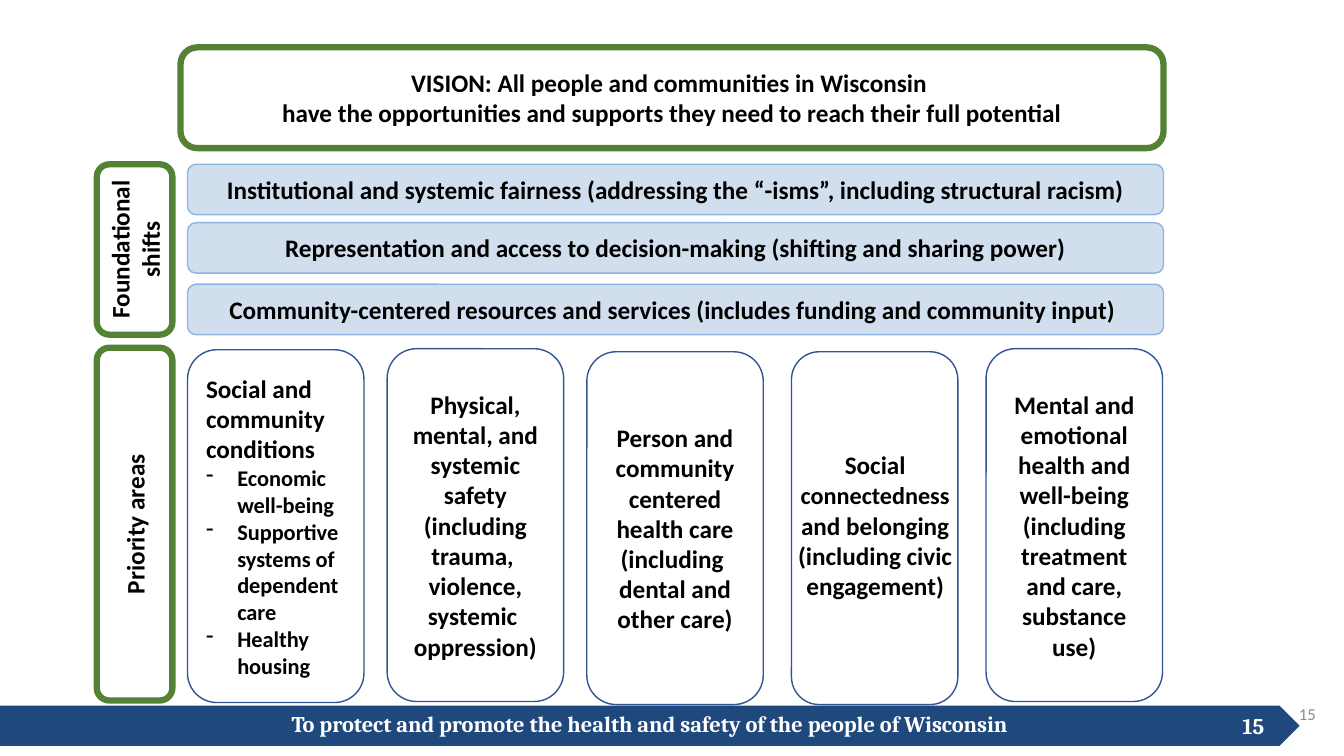
from dataclasses import dataclass

from lxml import etree
from pptx import Presentation
from pptx.dml.color import RGBColor
from pptx.enum import shapes, text
from pptx.oxml import ns
from pptx.util import Inches, Pt

ALIGN = text.PP_ALIGN
ANCHOR = text.MSO_ANCHOR


@dataclass(frozen=True)
class Theme:
    body_font: str = "Calibri"
    footer_font: str = "Cambria"
    black: str = "000000"
    white: str = "FFFFFF"
    grey: str = "8C8C8C"
    navy: str = "1F497D"
    green: str = "548235"
    card_line: str = "325491"
    shift_fill: str = "B9CDE5"
    shift_line: str = "8EB4E3"
    main_size: float = 18
    fitted_size: float = 17.3
    small_size: float = 16
    number_size: float = 12
    thick: float = 4.5
    thin: float = 1


THEME = Theme()
VISION = ("VISION: All people and communities in Wisconsin \n"
          "have the opportunities and supports they need to reach their full potential")
MISSION = "To protect and promote the health and safety of the people of Wisconsin"
PAGE = "15"

SHIFTS = [
    (1.63, "Institutional and systemic fairness (addressing the “-isms”, including structural racism)"),
    (2.21, "Representation and access to decision-making (shifting and sharing power)"),
    (2.82, "Community-centered resources and services (includes funding and community input) "),
]
LABELS = [(1.63, 1.69, "Foundational shifts"), (3.45, 3.5, "Priority areas")]

# top, width, centred text
PRIORITIES = [
    (3.47, 1.75, ""),
    (3.46, 1.75, "Physical, mental, and systemic safety (including trauma, \n"
                 "violence, systemic \noppression)"),
    (3.49, 1.75, "Person and community centered health care (including \n"
                 "dental and other care)"),
    (3.49, 1.65, ""),
    (3.46, 1.75, "Mental and emotional health and well-being "
                 "(including treatment and care, substance use)"),
]
CONDITIONS = ["Economic \nwell-being", "Supportive systems of dependent  care", "Healthy housing"]
CONTENT_LEFT, CONTENT_WIDTH = 1.86, 9.68
CARD_WIDTH, CARD_HEIGHT, CARD_STEP = 1.75, 3.5, 1.98


def rgb(color):
    return RGBColor.from_string(color)


def write(paragraph, words, size=THEME.main_size, color=THEME.black,
          font=THEME.body_font, bold=True, align=ALIGN.CENTER):
    """Add runs to a paragraph, with a line break at each newline."""
    paragraph.alignment = align
    for index, line in enumerate(words.split("\n")):
        if index:
            paragraph.add_line_break()
        run = paragraph.add_run()
        run.text = line
        run.font.name, run.font.size, run.font.bold = font, Pt(size), bold
        run.font.color.rgb = rgb(color)


def dash_bullet(paragraph):
    props = paragraph._p.get_or_add_pPr()
    props.set("marL", str(Inches(0.31)))
    props.set("indent", str(Inches(-0.31)))
    etree.SubElement(props, ns.qn("a:buChar")).set("char", "-")


def panel(slide, left, top, width, height, fill=None, line=None, line_width=THEME.thin,
          words="", kind=shapes.MSO_SHAPE.ROUNDED_RECTANGLE):
    box = slide.shapes.add_shape(kind, Inches(left), Inches(top), Inches(width), Inches(height))
    box.shadow.inherit = False
    if fill:
        box.fill.solid()
        box.fill.fore_color.rgb = rgb(fill)
    else:
        box.fill.background()
    if line:
        box.line.color.rgb = rgb(line)
        box.line.width = Pt(line_width)
    else:
        box.line.fill.background()
    box.text_frame.word_wrap = True
    box.text_frame.vertical_anchor = ANCHOR.MIDDLE
    if words:
        write(box.text_frame.paragraphs[0], words)
    return box


def text_area(slide, left, top, width, height, anchor=ANCHOR.TOP, inset=(0.1, 0.05)):
    """Add a wrapping text box and return its first paragraph."""
    frame = slide.shapes.add_textbox(
        Inches(left), Inches(top), Inches(width), Inches(height)).text_frame
    frame.word_wrap = True
    frame.vertical_anchor = anchor
    frame.margin_left = frame.margin_right = Inches(inset[0])
    frame.margin_top = frame.margin_bottom = Inches(inset[1])
    return frame.paragraphs[0]


def footer(slide):
    panel(slide, -0.11, 7, 13, 0.4, fill=THEME.navy, kind=shapes.MSO_SHAPE.PENTAGON)
    style = dict(size=THEME.small_size, color=THEME.white, font=THEME.footer_font)
    write(text_area(slide, 0, 7, 12.89, 0.37), MISSION, **style)
    write(text_area(slide, 9.56, 7, 3.11, 0.4, ANCHOR.MIDDLE, (0.13, 0.07)),
          PAGE, align=ALIGN.RIGHT, **style)
    write(text_area(slide, 12.35, 6.8, 0.8, 0.57, ANCHOR.MIDDLE, (0.1, 0.1)),
          PAGE, THEME.number_size, THEME.grey, bold=False, align=ALIGN.RIGHT)


def side_label(slide, top, height, words):
    label = panel(slide, 0.96, top, 0.75, height, line=THEME.green,
                  line_width=THEME.thick, words=words)
    label.text_frame._txBody.bodyPr.set("vert", "vert270")


def shift_bar(slide, top, words):
    bar = panel(slide, CONTENT_LEFT, top, CONTENT_WIDTH, 0.5,
                THEME.shift_fill, THEME.shift_line, words=words)
    color = bar.fill._xPr.find(ns.qn("a:solidFill"))[0]
    etree.SubElement(color, ns.qn("a:alpha")).set("val", "65000")


def priority_cards(slide):
    cards = []
    for column, (top, width, words) in enumerate(PRIORITIES):
        left = CONTENT_LEFT + column * CARD_STEP + (CARD_WIDTH - width) / 2
        cards.append(panel(slide, left, top, width, CARD_HEIGHT,
                           line=THEME.card_line, words=words))
    return cards


def social_conditions(card):
    frame = card.text_frame
    write(frame.paragraphs[0], "Social and community conditions", align=ALIGN.LEFT)
    for condition in CONDITIONS:
        item = frame.add_paragraph()
        dash_bullet(item)
        write(item, condition, THEME.small_size, align=ALIGN.LEFT)


def social_connectedness(slide):
    belonging = text_area(slide, 7.69, 4.41, 1.98, 1.65)
    write(belonging, "Social ")
    write(belonging, "connectedness", THEME.fitted_size)
    write(belonging, " and belonging (including civic engagement)")


def main():
    deck = Presentation()
    deck.slide_width, deck.slide_height = Inches(13.33), Inches(7.5)
    slide = deck.slides.add_slide(deck.slide_layouts[6])
    footer(slide)
    panel(slide, 1.79, 0.47, 9.75, 1, line=THEME.green, line_width=THEME.thick, words=VISION)
    cards = priority_cards(slide)
    social_conditions(cards[0])
    social_connectedness(slide)
    for top, words in SHIFTS:
        shift_bar(slide, top, words)
    for top, height, words in LABELS:
        side_label(slide, top, height, words)
    deck.save("out.pptx")


if __name__ == "__main__":
    main()
